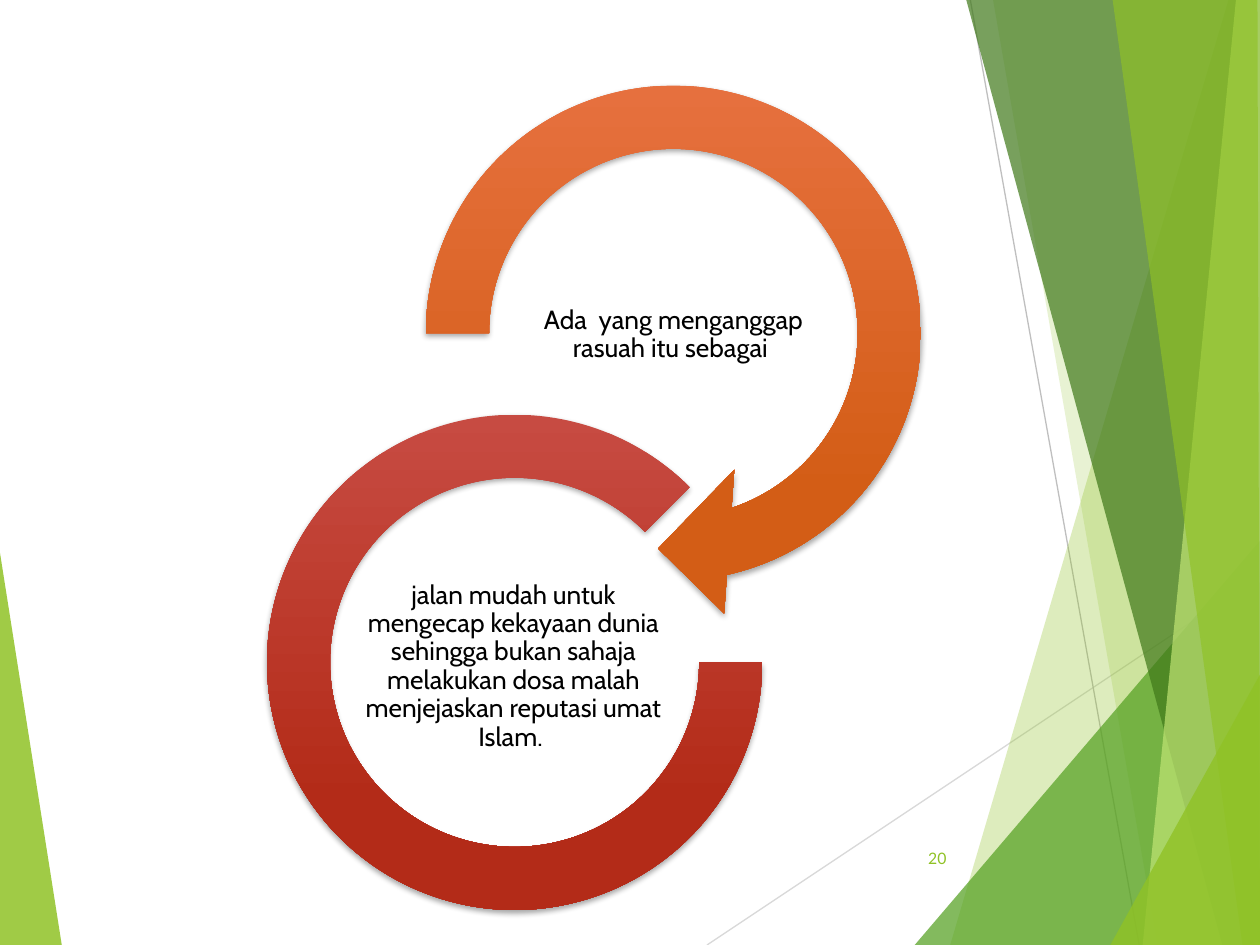
"""Build the slide with two interlocking ring arrows on a green faceted background."""
from lxml.etree import SubElement
from pptx import Presentation
from pptx.dml.color import RGBColor
from pptx.enum.shapes import MSO_CONNECTOR as Connector, MSO_SHAPE as Shape
from pptx.enum.text import MSO_ANCHOR as Anchor, PP_ALIGN as Align
from pptx.oxml.ns import qn
from pptx.util import Pt

COLORS = {
    "lime": "90C226", "green": "54A021", "forest": "3F7819", "pale": "C0E474",
    "light_gray": "D9D9D9", "gray": "BFBFBF", "black": "000000",
    "orange_top": "E87242", "orange_base": "D35D16",
    "red_top": "C74B42", "red_base": "B32B18",
}


def rgb(name):
    return RGBColor.from_string(COLORS[name])


def add_text(box, text, font_name, size, color, align, margin):
    textbox = slide.shapes.add_textbox(*map(Pt, box))
    frame = textbox.text_frame
    frame.word_wrap = True
    frame.vertical_anchor = Anchor.MIDDLE
    frame.margin_left = frame.margin_right = Pt(margin)
    frame.margin_top = frame.margin_bottom = Pt(min(margin, 3.6))
    paragraph = frame.paragraphs[0]
    paragraph.text = text
    paragraph.alignment = align
    paragraph.font.name = font_name
    paragraph.font.size = Pt(size)
    paragraph.font.color.rgb = rgb(color)
    return paragraph


presentation = Presentation()
presentation.slide_width, presentation.slide_height = Pt(720), Pt(540)
slide = presentation.slides.add_slide(presentation.slide_layouts[6])

background_lines = [
    ((404, 540, 720.5, 329), "light_gray"),
    ((554.5, 0, 651, 540), "gray"),
]
for ends, color in background_lines:
    line = slide.shapes.add_connector(Connector.STRAIGHT, *map(Pt, ends))
    line.line.color.rgb = rgb(color)
    line.line.width = Pt(0.75)
    SubElement(line._element.spPr, qn("a:effectLst"))

facets = [
    ("lime", 85, [(0, 316), (35.3, 540), (0, 540)]),
    ("lime", 30, [(702, 0), (543, 540), (720, 540), (720, 0)]),
    ("lime", 20, [(567.5, 0), (661.5, 540), (720, 540), (720, 0)]),
    ("green", 72, [(522.7, 540), (720, 309), (720, 540)]),
    ("forest", 70, [(552.2, 0), (698.5, 540), (720, 540), (720, 0)]),
    ("pale", 70, [(706.3, 0), (653, 540), (720, 540), (720, 0)]),
    ("lime", 65, [(635.8, 0), (710, 540), (720, 540), (718.6, 0)]),
    ("lime", 80, [(634.5, 540), (720, 385.5), (720, 540)]),
]
for color, opacity, points in facets:
    corners = [(Pt(x), Pt(y)) for x, y in points]
    builder = slide.shapes.build_freeform(*corners[0])
    builder.add_line_segments(corners[1:], close=True)
    facet = builder.convert_to_shape()
    facet.shadow.inherit = False
    facet.line.fill.background()
    facet.fill.solid()
    facet.fill.fore_color.rgb = rgb(color)
    fill_color = facet._element.spPr.find(".//" + qn("a:srgbClr"))
    SubElement(fill_color, qn("a:alpha"), val=str(opacity * 1000))

add_text((507.6, 476, 40.3, 28.8), "20", "Lato", 9, "lime", Align.RIGHT, 7.2)

rings = [
    (Shape.CIRCULAR_ARROW, (220.3, 25.9, 329, 329), (0.1098, 11.423, 45, 108, 0.125),
     ("orange_top", "orange_base"), (293, 145.4, 183.6, 92.2),
     "Ada  yang menganggap rasuah itu sebagai "),
    (Shape.BLOCK_ARC, (152.6, 237, 283, 283), (0, 189, 0.1274),
     ("red_top", "red_base"), (201.6, 334.8, 183.6, 92.2),
     "jalan mudah untuk mengecap kekayaan dunia sehingga bukan sahaja "
     "melakukan dosa malah menjejaskan reputasi umat Islam. "),
]
for kind, box, adjustments, gradient, text_box, text in rings:
    ring = slide.shapes.add_shape(kind, *map(Pt, box))
    for index, value in enumerate(adjustments):
        ring.adjustments[index] = value
    ring.line.fill.background()
    ring.fill.gradient()
    ring.fill.gradient_angle = 270
    for stop, color, position in zip(ring.fill.gradient_stops, gradient, (0, 0.78)):
        stop.color.rgb = rgb(color)
        stop.position = position
    effects = SubElement(ring._element.spPr, qn("a:effectLst"))
    shadow = SubElement(effects, qn("a:outerShdw"), blurRad=str(Pt(3)), dist=str(Pt(2)),
                        dir="5400000", rotWithShape="0")
    shadow_color = SubElement(shadow, qn("a:srgbClr"), val=COLORS["black"])
    SubElement(shadow_color, qn("a:alpha"), val="35000")

    paragraph = add_text(text_box, text, "Cabin", 15, "black", Align.CENTER, 0.75)
    paragraph.line_spacing = 0.9
    paragraph.space_after = Pt(5.25)

presentation.save("out.pptx")
